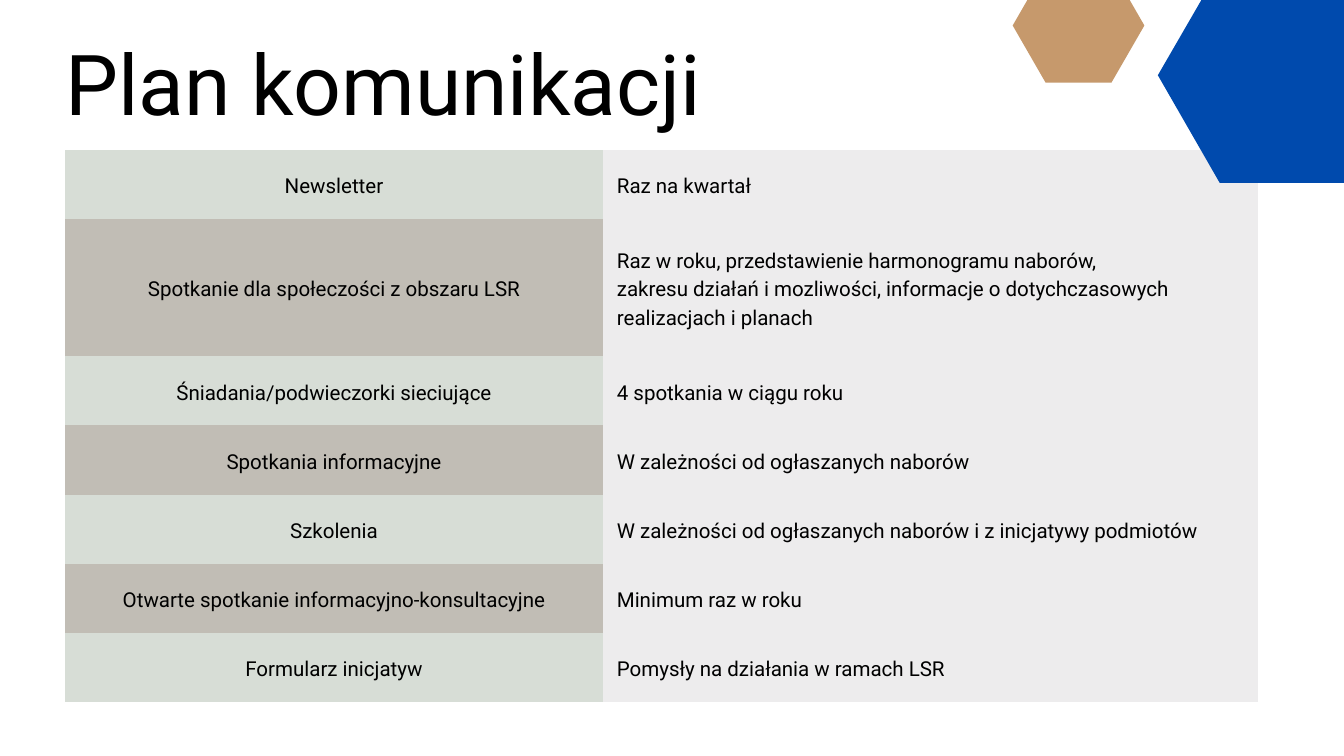
from dataclasses import dataclass

from lxml import etree
from pptx import Presentation
from pptx import util as u
from pptx.dml.color import RGBColor
from pptx.enum import text
from pptx.oxml.ns import qn

PX = 9144  # EMU per px, 100 px to the inch
FONT = "Roboto"
BLACK = "000000"
LABEL_FILLS = ("D7DDD6", "C1BDB5")
DETAIL_FILL = "EDECED"
BORDER = "CCCCCC"
CELL_MARGIN = 21
COLUMN_WIDTHS = (800, 975)


@dataclass(frozen=True)
class Activity:
    label: str
    detail: str
    height: int = 103


@dataclass(frozen=True)
class Hexagon:
    left: int
    top: int
    width: int
    height: int
    fill: str


ACTIVITIES = (
    Activity("Newsletter", "Raz na kwartał"),
    Activity(
        "Spotkanie dla społeczości z obszaru LSR",
        "Raz w roku, przedstawienie harmonogramu naborów,\n"
        "zakresu działań i mozliwości, informacje o dotychczasowych realizacjach i planach",
        204,
    ),
    Activity("Śniadania/podwieczorki sieciujące", "4 spotkania w ciągu roku"),
    Activity("Spotkania informacyjne", "W zależności od ogłaszanych naborów"),
    Activity("Szkolenia", "W zależności od ogłaszanych naborów i z inicjatywy podmiotów"),
    Activity("Otwarte spotkanie informacyjno-konsultacyjne", "Minimum raz w roku"),
    Activity("Formularz inicjatyw", "Pomysły na działania w ramach LSR"),
)

HEXAGONS = (
    Hexagon(1507, -47, 196, 170, "C6996C"),
    Hexagon(1723, -47, 369, 319, "004AAD"),
)


def px(length: int) -> u.Emu:
    return u.Emu(length * PX)


def color(value: str) -> RGBColor:
    return RGBColor.from_string(value)


def write_text(text_frame, content: str, size: int, spacing: float, alignment) -> None:
    text_frame.text = content
    for paragraph in text_frame.paragraphs:
        paragraph.alignment = alignment
        paragraph.line_spacing = u.Pt(spacing)
        for run in paragraph.runs:
            run.font.name = FONT
            run.font.size = u.Pt(size)
            run.font.color.rgb = color(BLACK)


def add_cell_borders(cell) -> None:
    """Give all four sides a zero-width line; lines must come before the fill."""
    properties = cell._tc.get_or_add_tcPr()
    for index, side in enumerate(("lnL", "lnR", "lnT", "lnB")):
        line = etree.Element(qn(f"a:{side}"), w="0")
        fill = etree.SubElement(line, qn("a:solidFill"))
        etree.SubElement(fill, qn("a:srgbClr"), val=BORDER)
        properties.insert(index, line)


def fill_cell(cell, content: str, fill: str, alignment) -> None:
    cell.margin_left = cell.margin_right = px(CELL_MARGIN)
    cell.margin_top = cell.margin_bottom = px(CELL_MARGIN)
    cell.vertical_anchor = text.MSO_ANCHOR.MIDDLE
    cell.fill.solid()
    cell.fill.fore_color.rgb = color(fill)
    write_text(cell.text_frame, content, 22, 30.8, alignment)
    add_cell_borders(cell)


def add_plan_table(slide, left: int, top: int) -> None:
    height = sum(activity.height for activity in ACTIVITIES)
    table = slide.shapes.add_table(
        len(ACTIVITIES), len(COLUMN_WIDTHS),
        px(left), px(top), px(sum(COLUMN_WIDTHS)), px(height),
    ).table
    table.first_row = table.horz_banding = False
    for column, width in zip(table.columns, COLUMN_WIDTHS):
        column.width = px(width)
    for index, activity in enumerate(ACTIVITIES):
        table.rows[index].height = px(activity.height)
        label_fill = LABEL_FILLS[index % len(LABEL_FILLS)]
        fill_cell(table.cell(index, 0), activity.label, label_fill, text.PP_ALIGN.CENTER)
        fill_cell(table.cell(index, 1), activity.detail, DETAIL_FILL, text.PP_ALIGN.LEFT)


def add_title(slide, content: str) -> None:
    box = slide.shapes.add_textbox(px(97), px(47), px(1188), px(151))
    frame = box.text_frame
    frame.margin_left = frame.margin_right = frame.margin_top = frame.margin_bottom = 0
    frame.word_wrap = True
    frame.auto_size = text.MSO_AUTO_SIZE.SHAPE_TO_FIT_TEXT
    write_text(frame, content, 90, 108, text.PP_ALIGN.LEFT)


def add_hexagon(slide, hexagon: Hexagon) -> None:
    left, top = hexagon.left, hexagon.top
    right, bottom = left + hexagon.width, top + hexagon.height
    middle = top + hexagon.height // 2
    inset = hexagon.width // 4
    builder = slide.shapes.build_freeform(right, middle, scale=PX)
    builder.add_line_segments(
        [
            (right - inset, bottom),
            (left + inset, bottom),
            (left, middle),
            (left + inset, top),
            (right - inset, top),
        ],
        close=True,
    )
    shape = builder.convert_to_shape()
    shape.shadow.inherit = False
    shape.fill.solid()
    shape.fill.fore_color.rgb = color(hexagon.fill)
    shape.line.fill.background()


def main() -> None:
    presentation = Presentation()
    presentation.slide_width = px(2000)
    presentation.slide_height = px(1125)
    slide = presentation.slides.add_slide(presentation.slide_layouts[6])
    add_plan_table(slide, 97, 223)
    add_title(slide, "Plan komunikacji")
    for hexagon in HEXAGONS:
        add_hexagon(slide, hexagon)
    presentation.save("out.pptx")


if __name__ == "__main__":
    main()
